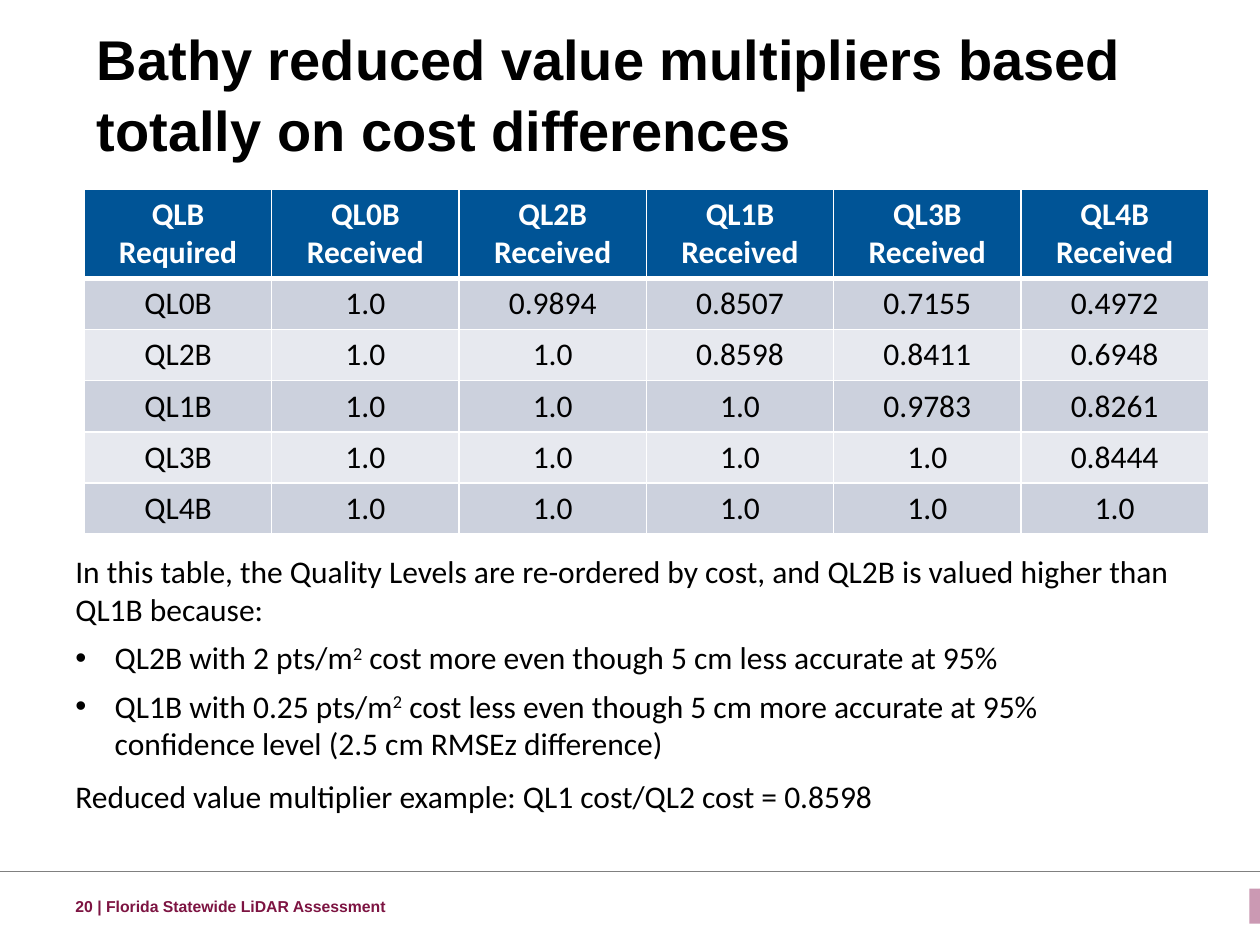
from dataclasses import dataclass

from lxml import etree
from pptx import Presentation
from pptx.dml.color import RGBColor
from pptx.enum.shapes import MSO_CONNECTOR, MSO_SHAPE
from pptx.enum.text import MSO_ANCHOR, PP_ALIGN
from pptx.oxml.ns import qn
from pptx.util import Pt

LEFT, CENTER = PP_ALIGN.LEFT, PP_ALIGN.CENTER
TOP, MIDDLE = MSO_ANCHOR.TOP, MSO_ANCHOR.MIDDLE
STRAIGHT = MSO_CONNECTOR.STRAIGHT
RECTANGLE = MSO_SHAPE.RECTANGLE


@dataclass(frozen=True)
class Style:
    font: str
    size: float
    color: str
    bold: bool = False


@dataclass(frozen=True)
class Theme:
    title: Style = Style("Arial", 32, "000000", True)
    footer: Style = Style("Arial", 9, "7D1442", True)
    body: Style = Style("Calibri", 18, "000000")
    header: Style = Style("Calibri", 18, "FFFFFF", True)
    header_fill: str = "005496"
    band_fills: tuple[str, str] = ("CCD1DD", "E7E9EF")
    border: str = "FFFFFF"
    rule: str = "808080"
    accent: str = "CB99B3"


@dataclass(frozen=True)
class Frame:
    left: float
    top: float
    width: float
    height: float

    def points(self) -> tuple:
        return Pt(self.left), Pt(self.top), Pt(self.width), Pt(self.height)


@dataclass(frozen=True)
class Line:
    """One paragraph; every second segment is superscript."""
    segments: tuple[str, ...]
    bullet: bool = False
    space_after: float = 0
    spacing: float = 1.0


THEME = Theme()
SLIDE_WIDTH, SLIDE_HEIGHT = 720, 540
BULLET_INDENT = 22.5
SUPERSCRIPT = "30000"
RULE_Y = 498

TABLE_FRAME = Frame(48.24, 108, 642.24, 196.4)
HEADER_HEIGHT = 50.4
LEVELS = ("QL0B", "QL2B", "QL1B", "QL3B", "QL4B")
HEADERS = ("QLB Required", *(f"{level} Received" for level in LEVELS))
MULTIPLIERS = (
    ("1.0", "0.9894", "0.8507", "0.7155", "0.4972"),
    ("1.0", "1.0", "0.8598", "0.8411", "0.6948"),
    ("1.0", "1.0", "1.0", "0.9783", "0.8261"),
    ("1.0", "1.0", "1.0", "1.0", "0.8444"),
    ("1.0", "1.0", "1.0", "1.0", "1.0"),
)

TITLE = Line(("Bathy reduced value multipliers based totally on cost differences",),
             spacing=1.05)
REASONS = (
    Line(("In this table, the Quality Levels are re-ordered by cost, and QL2B "
          "is valued higher than QL1B because:",), space_after=6),
    Line(("QL2B with 2 pts/m", "2",
          " cost more even though 5 cm less accurate at 95%"), True, 6),
    Line(("QL1B with 0.25 pts/m", "2",
          " cost less even though 5 cm more accurate at 95% confidence level "
          "(2.5 cm RMSEz difference)"), True, 6),
)
EXAMPLE = Line(("Reduced value multiplier example: QL1 cost/QL2 cost = 0.8598",))
FOOTER = Line(("20 | Florida Statewide LiDAR Assessment",))


def rgb(color: str) -> RGBColor:
    return RGBColor.from_string(color)


def add_span(para, text: str, style: Style, raised: bool = False) -> None:
    span = para.add_run()
    span.text = text
    span.font.name = style.font
    span.font.size = Pt(style.size)
    span.font.bold = style.bold
    span.font.color.rgb = rgb(style.color)
    if raised:
        span.font._element.set("baseline", SUPERSCRIPT)


def add_bullet(para) -> None:
    properties = para._p.get_or_add_pPr()
    properties.set("marL", str(Pt(BULLET_INDENT)))
    properties.set("indent", str(-Pt(BULLET_INDENT)))
    etree.SubElement(properties, qn("a:buFont")).set("typeface", "Arial")
    etree.SubElement(properties, qn("a:buChar")).set("char", "•")


def add_text(slide, frame: Frame, lines: tuple[Line, ...], style: Style, anchor=TOP) -> None:
    box = slide.shapes.add_textbox(*frame.points())
    text_frame = box.text_frame
    text_frame.word_wrap = True
    text_frame.vertical_anchor = anchor
    for index, line in enumerate(lines):
        para = text_frame.add_paragraph() if index else text_frame.paragraphs[0]
        if line.bullet:
            add_bullet(para)
        para.alignment = LEFT
        para.space_after = Pt(line.space_after)
        para.line_spacing = line.spacing
        for position, segment in enumerate(line.segments):
            add_span(para, segment, style, raised=position % 2 == 1)


def set_borders(cell, top: float, bottom: float) -> None:
    """Borders must come before the fill in the cell properties."""
    properties = cell._tc.get_or_add_tcPr()
    widths = {"a:lnL": 1, "a:lnR": 1, "a:lnT": top, "a:lnB": bottom}
    for tag, width in widths.items():
        border = etree.SubElement(properties, qn(tag), w=str(Pt(width)))
        fill = etree.SubElement(border, qn("a:solidFill"))
        etree.SubElement(fill, qn("a:srgbClr"), val=THEME.border)


def add_multiplier_table(slide) -> None:
    rows = (HEADERS, *((level, *values) for level, values in zip(LEVELS, MULTIPLIERS)))
    table = slide.shapes.add_table(len(rows), len(HEADERS), *TABLE_FRAME.points()).table
    for column in table.columns:
        column.width = Pt(TABLE_FRAME.width / len(HEADERS))
    body_height = (TABLE_FRAME.height - HEADER_HEIGHT) / len(LEVELS)
    for row_index, texts in enumerate(rows):
        is_header = row_index == 0
        table.rows[row_index].height = Pt(HEADER_HEIGHT if is_header else body_height)
        fill = THEME.header_fill if is_header else THEME.band_fills[(row_index - 1) % 2]
        for column_index, text in enumerate(texts):
            cell = table.cell(row_index, column_index)
            set_borders(cell, top=3 if row_index == 1 else 1, bottom=3 if is_header else 1)
            cell.fill.solid()
            cell.fill.fore_color.rgb = rgb(fill)
            para = cell.text_frame.paragraphs[0]
            para.alignment = CENTER
            add_span(para, text, THEME.header if is_header else THEME.body)


def add_footer_marks(slide) -> None:
    rule = slide.shapes.add_connector(STRAIGHT, 0, Pt(RULE_Y), Pt(SLIDE_WIDTH), Pt(RULE_Y))
    rule.line.color.rgb = rgb(THEME.rule)
    rule.line.width = Pt(0.5)
    etree.SubElement(rule._element.spPr, qn("a:effectLst"))

    tab = slide.shapes.add_shape(RECTANGLE, *Frame(714, 507.8, 6, 20).points())
    tab.shadow.inherit = False
    tab.fill.solid()
    tab.fill.fore_color.rgb = rgb(THEME.accent)
    tab.line.fill.background()


def main() -> None:
    deck = Presentation()
    deck.slide_width, deck.slide_height = Pt(SLIDE_WIDTH), Pt(SLIDE_HEIGHT)
    page = deck.slides.add_slide(deck.slide_layouts[6])
    add_footer_marks(page)
    add_multiplier_table(page)
    add_text(page, Frame(48.24, 27.36, 642.24, 50.4), (TITLE,), THEME.title, MIDDLE)
    add_text(page, Frame(36, 510, 444, 16), (FOOTER,), THEME.footer, MIDDLE)
    add_text(page, Frame(36, 312, 648, 128), REASONS, THEME.body)
    add_text(page, Frame(36, 440.6, 648, 29), (EXAMPLE,), THEME.body)
    deck.save("out.pptx")


if __name__ == "__main__":
    main()
